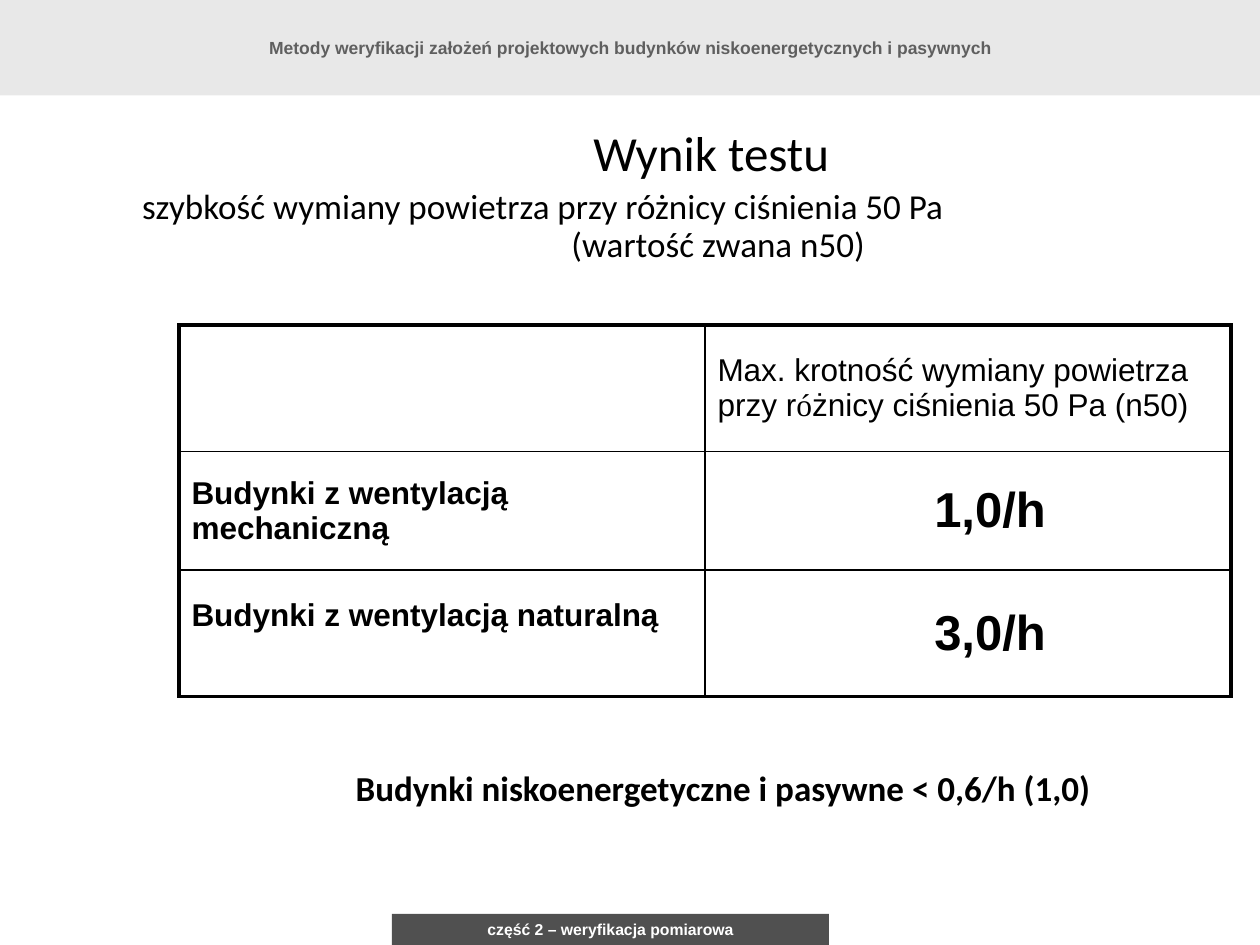
from lxml import etree
from pptx import Presentation, util as u
from pptx.dml.color import RGBColor
from pptx.enum import shapes, text
from pptx.oxml.ns import qn

BLACK = RGBColor(0x00, 0x00, 0x00)
WHITE = RGBColor(0xFF, 0xFF, 0xFF)
DARK_GREY = RGBColor(0x50, 0x50, 0x50)
MID_GREY = RGBColor(0x5F, 0x5F, 0x5F)
PALE_GREY = RGBColor(0xDD, 0xDD, 0xDD)

WIDTH, HEIGHT = u.Inches(10), u.Inches(7.5)
LEFT, CENTER = text.PP_ALIGN.LEFT, text.PP_ALIGN.CENTER
MIDDLE = text.MSO_ANCHOR.MIDDLE
OUTER, INNER = 2.25, 1


def share(left, top, width, height):
    """Turn shares of the slide into a box in EMU."""
    return (int(left * WIDTH), int(top * HEIGHT),
            int(width * WIDTH), int(height * HEIGHT))


def style(p, size, font="Arial", color=BLACK, bold=False, align=LEFT, indent=0):
    p.font.size, p.font.name, p.font.bold = u.Pt(size), font, bold
    p.font.color.rgb = color
    p.alignment = align
    if indent:
        p._p.get_or_add_pPr().set("marL", str(u.Inches(indent)))


def add_band(s, box, wording, fill, color, size, alpha=None):
    sp = s.shapes.add_shape(shapes.MSO_SHAPE.RECTANGLE, *box)
    sp.shadow.inherit = False
    sp.fill.solid()
    sp.fill.fore_color.rgb = fill
    sp.line.fill.background()
    if alpha:
        rgb = sp._element.spPr.find(".//" + qn("a:srgbClr"))
        etree.SubElement(rgb, qn("a:alpha")).set("val", str(alpha * 1000))
    tf = sp.text_frame
    tf.vertical_anchor = MIDDLE
    p = tf.paragraphs[0]
    p.text = wording
    style(p, size, color=color, bold=True, align=CENTER)


def add_text(s, box, lines):
    """Each line holds wording, size, bold, alignment, indent and space before."""
    tf = s.shapes.add_textbox(*box).text_frame
    tf.word_wrap = True
    for i, (wording, size, bold, align, indent, before) in enumerate(lines):
        p = tf.add_paragraph() if i else tf.paragraphs[0]
        p.text = wording
        style(p, size, "Calibri", bold=bold, align=align, indent=indent)
        p.line_spacing = 0.9
        p.space_before = u.Pt(before)


def set_borders(cell, widths):
    tcPr = cell._tc.get_or_add_tcPr()
    for i, (side, width) in enumerate(zip("LRTB", widths)):
        ln = etree.Element(qn("a:ln" + side), w=str(u.Pt(width)))
        fill = etree.SubElement(ln, qn("a:solidFill"))
        etree.SubElement(fill, qn("a:srgbClr"), val=str(BLACK))
        tcPr.insert(i, ln)


def add_limits_table(s, box, row_shares, rows):
    left, top, width, height = box
    n_rows, n_cols = len(rows), len(rows[0])
    table = s.shapes.add_table(n_rows, n_cols, *box).table
    table.first_row = table.horz_banding = False
    for r, row in enumerate(rows):
        table.rows[r].height = int(height * row_shares[r])
        for c, runs in enumerate(row):
            cell = table.cell(r, c)
            cell.fill.background()
            cell.vertical_anchor = MIDDLE
            p = cell.text_frame.paragraphs[0]
            is_value = r > 0 and c == 1
            style(p, 28 if is_value else 18, bold=r > 0,
                  indent=1.72 if is_value else 0)
            for wording, font in runs:
                run = p.add_run()
                run.text = wording
                run.font.name = font
            set_borders(cell, (OUTER if c == 0 else INNER,
                               OUTER if c == n_cols - 1 else INNER,
                               OUTER if r == 0 else INNER,
                               OUTER if r == n_rows - 1 else INNER))
    # The last label sits above the middle of its row
    table.cell(n_rows - 1, 0).margin_bottom = u.Inches(0.33)


def main():
    prs = Presentation()
    prs.slide_width, prs.slide_height = WIDTH, HEIGHT
    s = prs.slides.add_slide(prs.slide_layouts[6])

    # Title and subtitle
    add_text(s, share(0.1, 0.13, 0.9, 0.17), [
        ("Wynik testu", 28, False, CENTER, 0.29, 0),
        ("szybkość wymiany powietrza przy różnicy ciśnienia 50 Pa",
         20, False, LEFT, 0.03, 4),
        ("(wartość zwana n50)", 20, False, CENTER, 0.4, 0),
    ])

    # Air change limits
    add_limits_table(s, share(0.142, 0.344, 0.835, 0.393), (0.34, 0.32, 0.34), [
        [[], [("Max. krotność wymiany powietrza przy r", "Arial"),
              ("ó", "Times New Roman"),
              ("żnicy ciśnienia 50 Pa (n50)", "Arial")]],
        [[("Budynki z wentylacją mechaniczną", "Arial")], [("1,0/h", "Arial")]],
        [[("Budynki z wentylacją naturalną", "Arial")], [("3,0/h", "Arial")]],
    ])

    # Conclusion
    add_text(s, share(0.125, 0.81, 0.898, 0.09), [
        ("Budynki niskoenergetyczne i pasywne < 0,6/h (1,0)",
         20, True, CENTER, 0, 0),
    ])

    # Footer and header bands
    add_band(s, share(0.311, 0.967, 0.347, 0.033),
             "część 2 – weryfikacja pomiarowa", DARK_GREY, WHITE, 9)
    add_band(s, share(0, 0, 1, 0.101),
             "Metody weryfikacji założeń projektowych budynków "
             "niskoenergetycznych i pasywnych", PALE_GREY, MID_GREY, 10, alpha=65)

    prs.save("out.pptx")


if __name__ == "__main__":
    main()
